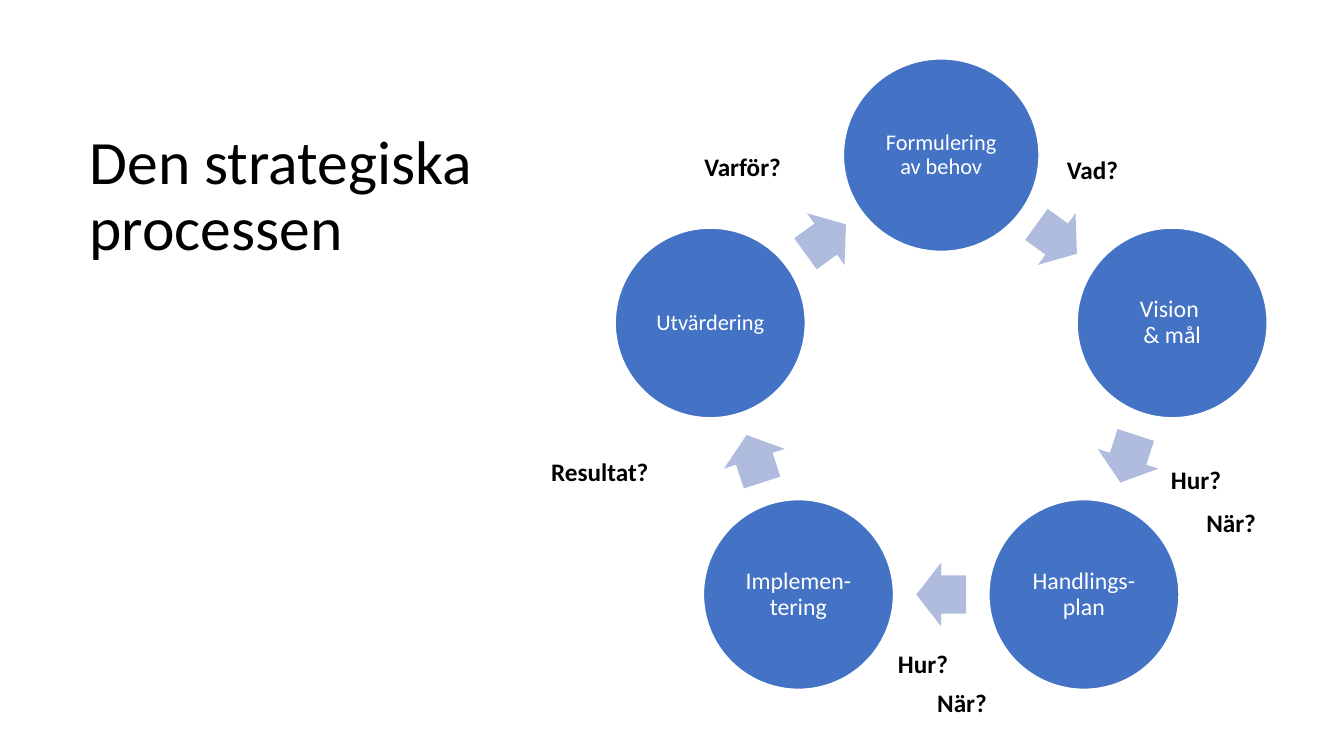
from math import cos, radians, sin

from pptx import Presentation
from pptx.dml.color import RGBColor
from pptx.enum.shapes import MSO_SHAPE
from pptx.enum.text import MSO_ANCHOR, PP_ALIGN
from pptx.util import Cm, Pt

TITLE = ["Den strategiska ", "processen"]
STEPS = [
    (["Formulering av behov"], 16, 4.93, 4.85),
    (["Vision ", "& mål"], 17, 4.79, 4.78),
    (["Handlings-plan"], 17, 4.79, 4.78),
    (["Implemen-tering"], 17, 4.79, 4.78),
    (["Utvärdering"], 16, 4.79, 4.78),
]
QUESTIONS = [
    ("Vad?", 26.64, 3.76, 2.62),
    ("När?", 30.15, 12.67, 2.62),
    ("Hur?", 29.26, 11.58, 2.62),
    ("Resultat?", 13.64, 11.38, 4.22),
    ("Varför?", 17.5, 3.68, 3.33),
    ("Hur?", 22.38, 16.21, 2.62),
    ("När?", 23.37, 17.2, 2.62),
]

FONT = "Calibri"
BLACK = RGBColor(0x00, 0x00, 0x00)
WHITE = RGBColor(0xFF, 0xFF, 0xFF)
BLUE = RGBColor(0x44, 0x72, 0xC4)
PALE_BLUE = RGBColor(0xB0, 0xBC, 0xDE)

CENTER_X, CENTER_Y, RADIUS = 23.72, 10.03, 6.12
ARROW_W, ARROW_H = 1.26, 1.61
STEP_ANGLE = 360 / len(STEPS)


def write(shape, lines, size, color, bold=False, align=PP_ALIGN.LEFT, spacing=1.0):
    tf = shape.text_frame
    tf.word_wrap = True
    p = tf.paragraphs[0]
    p.alignment = align
    p.line_spacing = spacing
    for i, line in enumerate(lines):
        if i:
            p.add_line_break()
        r = p.add_run()
        r.text = line
        r.font.name = FONT
        r.font.size = Pt(size)
        r.font.bold = bold
        r.font.color.rgb = color
    return tf


def add_on_ring(s, kind, angle, radius, width, height, fill):
    x = CENTER_X + radius * sin(radians(angle))
    y = CENTER_Y - radius * cos(radians(angle))
    sp = s.shapes.add_shape(kind, Cm(x - width / 2), Cm(y - height / 2),
                            Cm(width), Cm(height))
    sp.shadow.inherit = False
    sp.fill.solid()
    sp.fill.fore_color.rgb = fill
    return sp


def add_step(s, angle, lines, size, width, height):
    sp = add_on_ring(s, MSO_SHAPE.OVAL, angle, RADIUS, width, height, BLUE)
    sp.line.color.rgb = WHITE
    sp.line.width = Pt(1)
    tf = write(sp, lines, size, WHITE, align=PP_ALIGN.CENTER, spacing=0.9)
    tf.vertical_anchor = MSO_ANCHOR.MIDDLE
    tf.margin_left = tf.margin_right = tf.margin_top = tf.margin_bottom = Cm(0.05)


def add_arrow(s, angle):
    radius = RADIUS * cos(radians(STEP_ANGLE / 2))
    sp = add_on_ring(s, MSO_SHAPE.RIGHT_ARROW, angle, radius, ARROW_W, ARROW_H, PALE_BLUE)
    sp.line.fill.background()
    sp.adjustments[0] = 0.6
    sp.adjustments[1] = 0.5
    sp.rotation = angle


def main():
    prs = Presentation()
    prs.slide_width, prs.slide_height = Cm(33.87), Cm(19.05)
    s = prs.slides.add_slide(prs.slide_layouts[6])

    title = s.shapes.add_textbox(Cm(2.01), Cm(3.81), Cm(28.42), Cm(2.34))
    tf = write(title, TITLE, 44, BLACK, spacing=0.9)
    tf.vertical_anchor = MSO_ANCHOR.MIDDLE

    for i, step in enumerate(STEPS):
        add_step(s, i * STEP_ANGLE, *step)
        add_arrow(s, (i + 0.5) * STEP_ANGLE)

    for question, left, top, width in QUESTIONS:
        box = s.shapes.add_textbox(Cm(left), Cm(top), Cm(width), Cm(1.02))
        write(box, [question], 18, BLACK, bold=True)

    prs.save("out.pptx")


if __name__ == "__main__":
    main()
